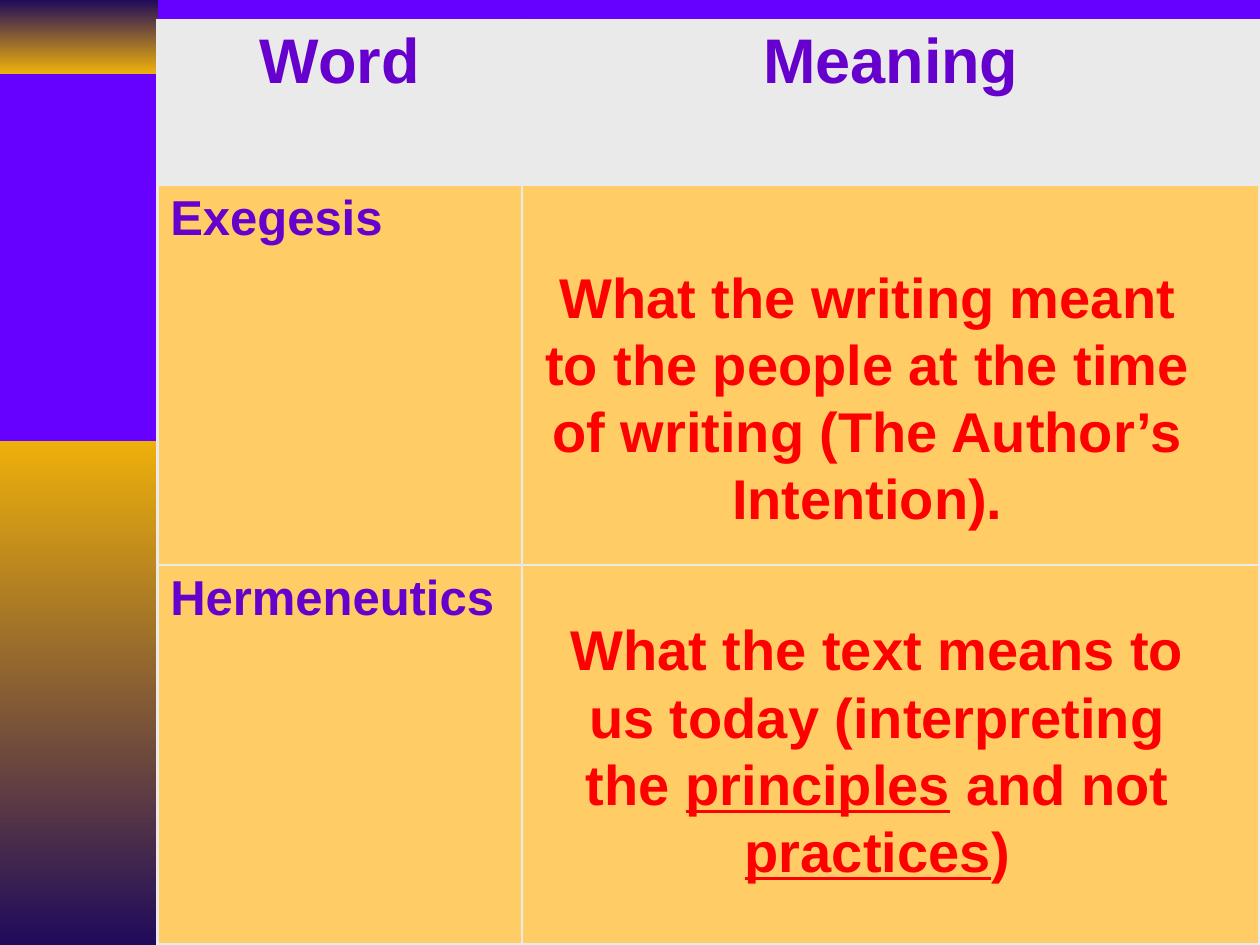
from dataclasses import dataclass

from lxml import etree
from pptx import Presentation
from pptx.dml.color import RGBColor
from pptx.enum import shapes, text
from pptx.oxml.ns import qn
from pptx.util import Cm, Pt


@dataclass(frozen=True)
class Theme:
    background: str = "6600FF"
    gold: str = "EEB00B"
    navy: str = "200B5B"
    grid: str = "EAEAEA"
    entry: str = "FFCC66"
    term: str = "6600CC"
    meaning: str = "FF0000"
    font: str = "Arial"
    header_size: int = 36
    term_size: int = 28
    meaning_size: int = 32
    outer_border: float = 2.25
    inner_border: float = 1


@dataclass(frozen=True)
class Band:
    top: float
    height: float
    start: str
    end: str


@dataclass(frozen=True)
class Definition:
    """A term, and its meaning as pieces of which every second is underlined."""
    term: str
    meaning: tuple[str, ...]
    left: float
    top: float
    width: float


THEME = Theme()
SIDEBAR_WIDTH = 3.18
TABLE_TOP = 0.41
COLUMN_WIDTHS = (7.34, 14.88)
ROW_HEIGHTS = (3.32, 7.66, 7.66)
MEANING_HEIGHT = 5.74

BANDS = (
    Band(0, 1.48, THEME.navy, THEME.gold),
    Band(8.89, 10.16, THEME.gold, THEME.navy),
)
HEADERS = ("Word", "Meaning")
DEFINITIONS = (
    Definition(
        "Exegesis",
        ("What the writing meant to the people at the time of writing "
         "(The Author’s Intention).",),
        10.72, 5.16, 13.54),
    Definition(
        "Hermeneutics",
        ("What the text means to us today (interpreting the ", "principles",
         " and not ", "practices", ")"),
        10.8, 12.27, 13.77),
)


def write(frame, *pieces: str, size: float, color: str,
          align=text.PP_ALIGN.LEFT) -> None:
    """Fill one bold paragraph, underlining every second piece."""
    paragraph = frame.paragraphs[0]
    paragraph.alignment = align
    for index, piece in enumerate(pieces):
        run = paragraph.add_run()
        run.text = piece
        run.font.name = THEME.font
        run.font.size = Pt(size)
        run.font.bold = True
        run.font.underline = index % 2 == 1
        run.font.color.rgb = RGBColor.from_string(color)


def add_band(slide, band: Band) -> None:
    bar = slide.shapes.add_shape(
        shapes.MSO_SHAPE.RECTANGLE, 0, Cm(band.top),
        Cm(SIDEBAR_WIDTH), Cm(band.height))
    bar.shadow.inherit = False
    bar.line.fill.background()
    bar.fill.gradient()
    bar.fill.gradient_angle = 270
    for stop, color in zip(bar.fill.gradient_stops, (band.start, band.end)):
        stop.color.rgb = RGBColor.from_string(color)


def set_borders(cell, outer_sides: dict[str, bool]) -> None:
    properties = cell._tc.get_or_add_tcPr()
    for side, is_outer in outer_sides.items():
        width = THEME.outer_border if is_outer else THEME.inner_border
        line = etree.SubElement(properties, qn(f"a:ln{side}"), w=str(Pt(width)))
        fill = etree.SubElement(line, qn("a:solidFill"))
        etree.SubElement(fill, qn("a:srgbClr"), val=THEME.grid)


def add_glossary(slide) -> None:
    row_count, column_count = len(ROW_HEIGHTS), len(COLUMN_WIDTHS)
    glossary = slide.shapes.add_table(
        row_count, column_count, Cm(SIDEBAR_WIDTH), Cm(TABLE_TOP),
        Cm(sum(COLUMN_WIDTHS)), Cm(sum(ROW_HEIGHTS))).table
    glossary.first_row = glossary.horz_banding = False
    for column, width in zip(glossary.columns, COLUMN_WIDTHS):
        column.width = Cm(width)
    for r, height in enumerate(ROW_HEIGHTS):
        glossary.rows[r].height = Cm(height)
        for c in range(column_count):
            cell = glossary.cell(r, c)
            set_borders(cell, {"L": c == 0, "R": c == column_count - 1,
                               "T": r == 0, "B": r == row_count - 1})
            cell.fill.solid()
            cell.fill.fore_color.rgb = RGBColor.from_string(
                THEME.entry if r else THEME.grid)

    for c, header in enumerate(HEADERS):
        write(glossary.cell(0, c).text_frame, header, size=THEME.header_size,
              color=THEME.term, align=text.PP_ALIGN.CENTER)
    for r, definition in enumerate(DEFINITIONS, start=1):
        write(glossary.cell(r, 0).text_frame, definition.term,
              size=THEME.term_size, color=THEME.term)


def add_meaning(slide, definition: Definition) -> None:
    frame = slide.shapes.add_textbox(
        Cm(definition.left), Cm(definition.top),
        Cm(definition.width), Cm(MEANING_HEIGHT)).text_frame
    frame.word_wrap = True
    frame.auto_size = text.MSO_AUTO_SIZE.SHAPE_TO_FIT_TEXT
    write(frame, *definition.meaning, size=THEME.meaning_size,
          color=THEME.meaning, align=text.PP_ALIGN.CENTER)


def main() -> None:
    presentation = Presentation()
    presentation.slide_width, presentation.slide_height = Cm(25.4), Cm(19.05)
    slide = presentation.slides.add_slide(presentation.slide_layouts[6])
    slide.background.fill.solid()
    slide.background.fill.fore_color.rgb = RGBColor.from_string(THEME.background)

    for band in BANDS:
        add_band(slide, band)
    add_glossary(slide)
    for definition in DEFINITIONS:
        add_meaning(slide, definition)
    presentation.save("out.pptx")


if __name__ == "__main__":
    main()
